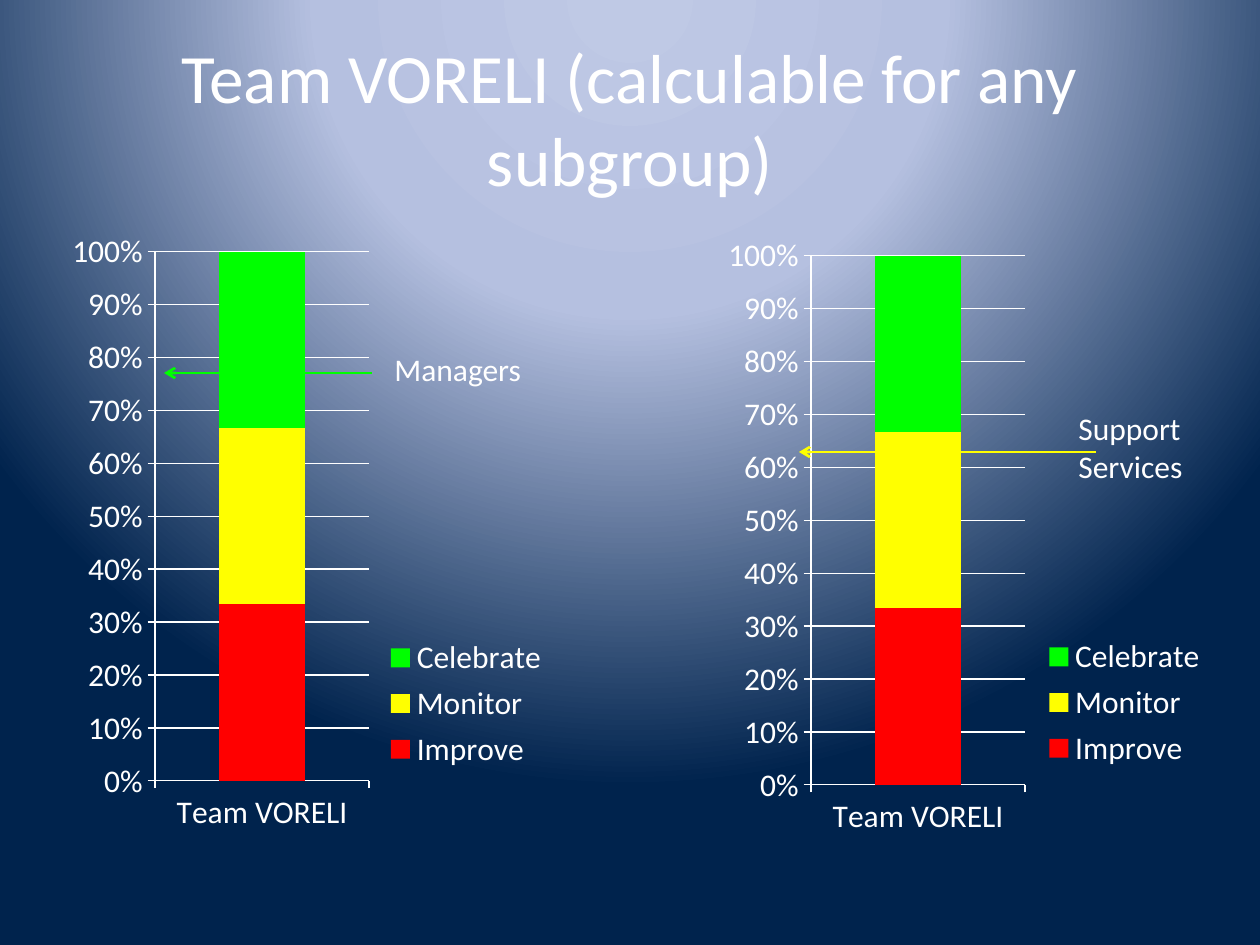
from lxml import etree
from pptx import Presentation
from pptx.chart.data import CategoryChartData
from pptx.dml.color import RGBColor
from pptx.enum.chart import XL_CHART_TYPE, XL_LEGEND_POSITION, XL_TICK_MARK
from pptx.enum.shapes import MSO_CONNECTOR
from pptx.enum.text import MSO_ANCHOR, PP_ALIGN
from pptx.oxml import parse_xml
from pptx.oxml.ns import nsdecls, qn
from pptx.util import Pt

SCALE = 914400 / 126
FONT = "Calibri"
TEAM = "Team VORELI"
COLORS = {
    "text": "FFFFFF",
    "Improve": "FF0000",
    "Monitor": "FFFF00",
    "Celebrate": "00FF00",
    "glow": "BFC9E5",
    "haze": "B5C0E0",
    "navy": "00234D",
}
LEVELS = ["Improve", "Monitor", "Celebrate"]


def px(*lengths):
    return [round(n * SCALE) for n in lengths]


def rgb(name):
    return RGBColor.from_string(COLORS[name])


def set_background(s):
    fill = s.background.fill
    fill.gradient()
    stops = "".join(
        f'<a:gs pos="{pos * 1000}"><a:srgbClr val="{COLORS[name]}"/></a:gs>'
        for pos, name in [(0, "glow"), (40, "haze"), (100, "navy")]
    )
    grad = parse_xml(
        f'<a:gradFill {nsdecls("a")} rotWithShape="1"><a:gsLst>{stops}</a:gsLst>'
        '<a:path path="circle"><a:fillToRect l="50000" t="-80000" r="50000" b="180000"/>'
        "</a:path></a:gradFill>"
    )
    old = s.background._cSld.find(".//" + qn("a:gradFill"))
    old.getparent().replace(old, grad)


def add_text(s, text, box, size=18, align=PP_ALIGN.LEFT, anchor=MSO_ANCHOR.TOP):
    tf = s.shapes.add_textbox(*px(*box)).text_frame
    tf.word_wrap = True
    tf.vertical_anchor = anchor
    p = tf.paragraphs[0]
    p.alignment = align
    r = p.add_run()
    r.text = text
    r.font.size = Pt(size)
    r.font.name = FONT
    r.font.color.rgb = rgb("text")


def make_layout(frame, box, inner=False):
    x, y, w, h = box
    width, height = frame
    layout = parse_xml(f'<c:layout {nsdecls("c")}><c:manualLayout/></c:layout>')
    values = [("layoutTarget", "inner")] if inner else []
    values += [("xMode", "edge"), ("yMode", "edge")]
    values += zip("xywh", [x / width, y / height, w / width, h / height])
    for tag, value in values:
        text = value if isinstance(value, str) else f"{value:.3f}"
        etree.SubElement(layout[0], qn("c:" + tag)).set("val", text)
    return layout


def add_team_chart(s, box, legend_box):
    data = CategoryChartData()
    data.categories = [TEAM]
    for level in LEVELS:
        data.add_series(level, [33])
    chart = s.shapes.add_chart(XL_CHART_TYPE.COLUMN_STACKED_100, *px(*box), data).chart
    chart.has_title = False
    chart.font.size = Pt(18)
    chart.font.name = FONT
    chart.font.color.rgb = rgb("text")

    plot = chart.plots[0]
    plot.gap_width = 150
    plot.overlap = 100
    plot.vary_by_categories = False
    for series in plot.series:
        series.format.fill.solid()
        series.format.fill.fore_color.rgb = rgb(series.name)

    value_axis = chart.value_axis
    value_axis.has_major_gridlines = True
    value_axis.tick_labels.number_format = "0%"
    value_axis.tick_labels.number_format_is_linked = False
    for axis in (chart.category_axis, value_axis):
        axis.major_tick_mark = XL_TICK_MARK.OUTSIDE
    for part in (chart.category_axis, value_axis, value_axis.major_gridlines):
        part.format.line.color.rgb = rgb("text")
        part.format.line.width = Pt(0.75)

    chart.has_legend = True
    chart.legend.position = XL_LEGEND_POSITION.RIGHT
    chart.legend.include_in_layout = False

    plot_area = chart._chartSpace.find(".//" + qn("c:plotArea"))
    legend = chart._chartSpace.find(".//" + qn("c:legend"))
    for parent in (plot_area, legend):
        for old in parent.findall(qn("c:layout")):
            parent.remove(old)
    plot_area.insert(0, make_layout(box[2:], (92, 32, 214, 529), inner=True))
    legend.find(qn("c:legendPos")).addnext(make_layout(box[2:], legend_box))


def add_arrow(s, start, end, y, level):
    line = s.shapes.add_connector(MSO_CONNECTOR.STRAIGHT, *px(start, y, end, y))
    line.line.color.rgb = rgb(level)
    line.line.width = Pt(1.5)
    etree.SubElement(line.line._get_or_add_ln(), qn("a:tailEnd")).set("type", "arrow")
    etree.SubElement(line._element.spPr, qn("a:effectLst"))


def add_panel(s, left, top, legend_box, label, label_box, arrow, level):
    add_team_chart(s, (left, top, 498, 624), legend_box)
    x, y, w, h = label_box
    add_text(s, label, (left + x, top + y, w, h))
    start, end, arrow_y = arrow
    add_arrow(s, left + start, left + end, top + arrow_y, level)


def main():
    prs = Presentation()
    prs.slide_width, prs.slide_height = px(1260, 945)
    s = prs.slides.add_slide(prs.slide_layouts[6])
    set_background(s)
    add_text(s, f"{TEAM} (calculable for any subgroup)", (63, 38, 1134, 158),
             size=39.6, align=PP_ALIGN.CENTER, anchor=MSO_ANCHOR.MIDDLE)
    add_panel(s, 63, 220, (323, 411, 160, 145), "Managers",
              (319, 124, 208, 50), (309, 101, 153), "Celebrate")
    add_panel(s, 719, 224, (334, 406, 160, 145), "Support Services",
              (347, 179, 194, 89), (377, 80, 228), "Monitor")
    prs.save("out.pptx")


if __name__ == "__main__":
    main()
